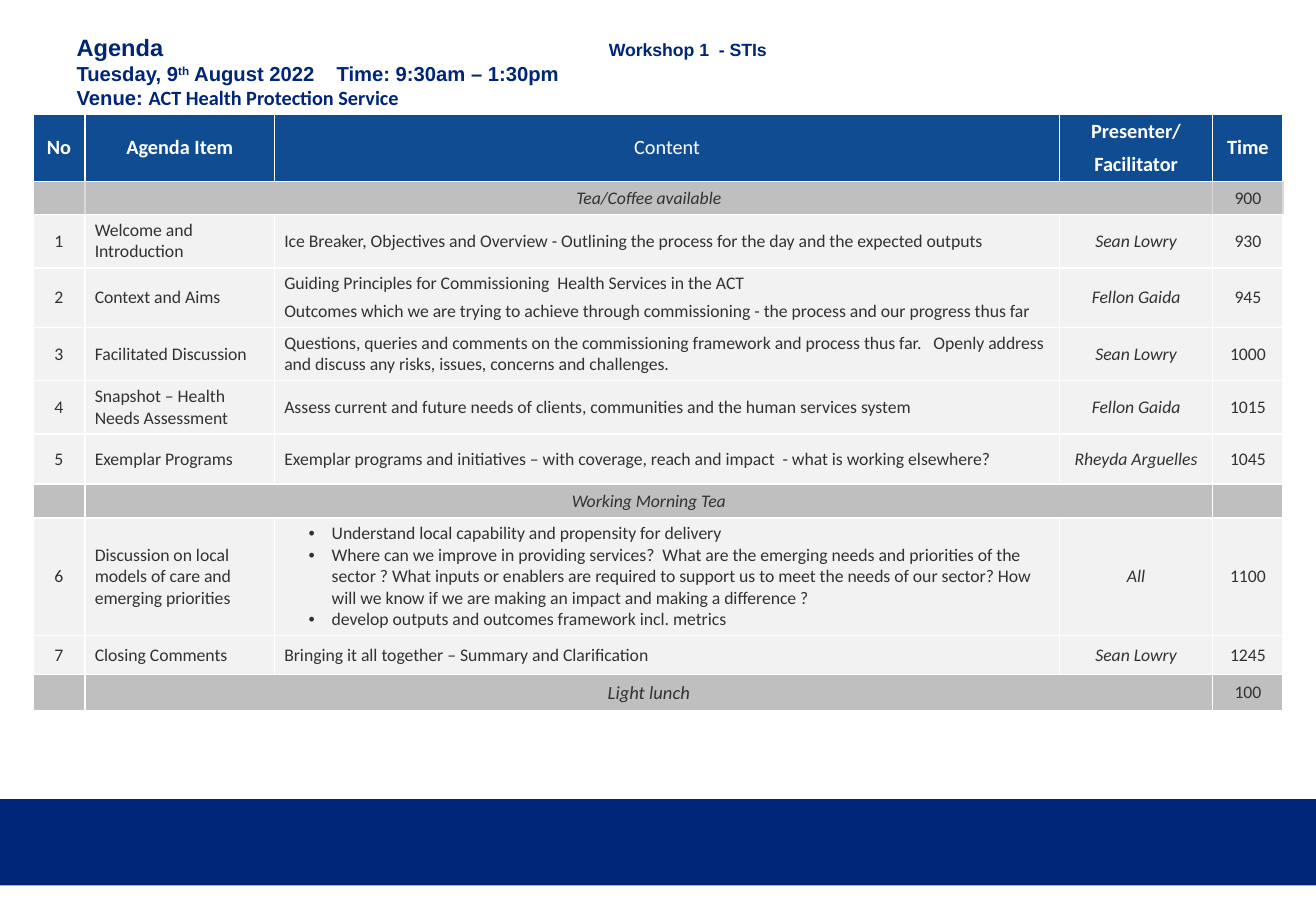
from lxml.etree import SubElement
from pptx import Presentation
from pptx.dml.color import RGBColor
from pptx.enum.shapes import MSO_SHAPE as Shape
from pptx.enum.text import MSO_ANCHOR as Anchor, MSO_AUTO_SIZE as Fit, PP_ALIGN as Align
from pptx.oxml.ns import qn
from pptx.util import Inches, Pt

NAVY = RGBColor(0x00, 0x26, 0x77)
BLUE = RGBColor(0x10, 0x4C, 0x92)
BREAK = RGBColor(0xBF, 0xBF, 0xBF)
PALE = RGBColor(0xF2, 0xF2, 0xF2)
RULE = RGBColor(0xD9, 0xD9, 0xD9)
INK = RGBColor(0x32, 0x32, 0x32)
WHITE = RGBColor(0xFF, 0xFF, 0xFF)


def add_run(para, text, size, color, font="Calibri", bold=False, italic=False):
    run = para.add_run()
    run.text = text
    style = run.font
    style.name, style.size = font, Pt(size)
    style.bold, style.italic = bold, italic
    style.color.rgb = color
    return run


def add_edge(cell, side, color):
    line = SubElement(cell._tc.get_or_add_tcPr(), qn("a:ln" + side), w=str(Pt(1)))
    fill = SubElement(line, qn("a:solidFill"))
    SubElement(fill, qn("a:srgbClr"), val=str(color))


prs = Presentation()
prs.slide_width, prs.slide_height = Inches(10.83), Inches(7.5)
slide = prs.slides.add_slide(prs.slide_layouts[5])

band = slide.shapes.add_shape(
    Shape.RECTANGLE, 0, Inches(6.58), prs.slide_width, Inches(0.71))
band.shadow.inherit = False
band.fill.solid()
band.fill.fore_color.rgb = NAVY
band.line.fill.background()

# Heading: each line has its runs and, if needed, one tab stop
title = slide.shapes.title
title.left, title.top = Inches(0.53), Inches(0.21)
title.width, title.height = Inches(9.45), Inches(0.7)
frame = title.text_frame
frame.auto_size = Fit.NONE
frame.word_wrap = True
frame.vertical_anchor = Anchor.TOP
frame.margin_top, frame.margin_bottom = Inches(0.06), 0
heading = [
    (4.38, [("Agenda\t", 14, "Arial"), ("Workshop 1  - STIs", 10.5, "Arial")]),
    (2.14, [("Tuesday, 9", 12, "Arial"), ("th", 12, "Arial"),
            (" August 2022\tTime: 9:30am – 1:30pm", 12, "Arial")]),
    (None, [("Venue: ", 12, "Arial"), ("ACT Health Protection Service", 12, "Calibri")]),
]
for i, (stop, runs) in enumerate(heading):
    para = frame.add_paragraph() if i else frame.paragraphs[0]
    para.alignment = Align.LEFT
    if stop:
        tabs = SubElement(para._p.get_or_add_pPr(), qn("a:tabLst"))
        SubElement(tabs, qn("a:tab"), pos=str(Inches(stop)), algn="l")
    for text, size, font in runs:
        run = add_run(para, text, size, NAVY, font, bold=True)
        if text == "th":
            run.font._element.set("baseline", "30000")

# Agenda rows: height, then the cells; a row of three is a break
rows = [
    (0.55, ["No", "Agenda Item", "Content", "Presenter/\nFacilitator", "Time"]),
    (0.27, ["", "Tea/Coffee available", "900"]),
    (0.44, ["1", "Welcome and Introduction",
            "Ice Breaker, Objectives and Overview - Outlining the process for the day "
            "and the expected outputs", "Sean Lowry", "930"]),
    (0.49, ["2", "Context and Aims",
            "Guiding Principles for Commissioning  Health Services in the ACT\n"
            "Outcomes which we are trying to achieve through commissioning - the process "
            "and our progress thus far", "Fellon Gaida", "945"]),
    (0.44, ["3", "Facilitated Discussion",
            "Questions, queries and comments on the commissioning framework and process "
            "thus far.   Openly address and discuss any risks, issues, concerns and "
            "challenges.", "Sean Lowry", "1000"]),
    (0.44, ["4", "Snapshot – Health Needs Assessment",
            "Assess current and future needs of clients, communities and the human "
            "services system", "Fellon Gaida", "1015"]),
    (0.41, ["5", "Exemplar Programs",
            "Exemplar programs and initiatives – with coverage, reach and impact  - what "
            "is working elsewhere?", "Rheyda Arguelles", "1045"]),
    (0.28, ["", "Working Morning Tea", ""]),
    (0.97, ["6", "Discussion on local models of care and emerging priorities",
            "Understand local capability and propensity for delivery\n"
            "Where can we improve in providing services?  What are the emerging needs and "
            "priorities of the sector ? What inputs or enablers are required to support us "
            "to meet the needs of our sector? How will we know if we are making an impact "
            "and making a difference ?\n"
            "develop outputs and outcomes framework incl. metrics", "All", "1100"]),
    (0.32, ["7", "Closing Comments",
            "Bringing it all together – Summary and Clarification", "Sean Lowry", "1245"]),
    (0.3, ["", "Light lunch", "100"]),
]
widths = [0.43, 1.56, 6.46, 1.26, 0.58]
table = slide.shapes.add_table(
    len(rows), len(widths), Inches(0.27), Inches(0.94),
    Inches(sum(widths)), Inches(sum(height for height, _ in rows))).table
for col, width in zip(table.columns, widths):
    col.width = Inches(width)

for r, (height, texts) in enumerate(rows):
    table.rows[r].height = Inches(height)
    pause = len(texts) == 3
    if pause:
        texts = [texts[0], texts[1], "", "", texts[2]]
        table.cell(r, 1).merge(table.cell(r, 3))
    for c, text in enumerate(texts):
        cell = table.cell(r, c)
        cell.vertical_anchor = Anchor.MIDDLE
        cell.margin_left = cell.margin_right = Inches(0.08)
        cell.margin_top = cell.margin_bottom = Inches(0.04)
        for side in "LRTB":
            inner = (side == "L" and c > 0) or side == "R"
            add_edge(cell, side, RULE if r == 1 and inner else WHITE)
        cell.fill.solid()
        cell.fill.fore_color.rgb = BLUE if r == 0 else BREAK if pause else PALE

        listed = texts[0] == "6" and c == 2
        for i, line in enumerate(text.split("\n")):
            para = cell.text_frame.add_paragraph() if i else cell.text_frame.paragraphs[0]
            plain = r > 0 and not pause and c in (1, 2)
            para.alignment = Align.LEFT if plain else Align.CENTER
            if i and not listed:
                para.space_before = Pt(4 if r else 5)
            if listed:
                props = para._p.get_or_add_pPr()
                props.set("marL", str(Inches(0.39)))
                props.set("indent", str(Inches(-0.19)))
                SubElement(props, qn("a:buFont"), typeface="Arial")
                SubElement(props, qn("a:buChar"), char="•")
            if not line:
                SubElement(para._p, qn("a:endParaRPr"), sz="1050")
            elif r == 0:
                add_run(para, line, 12, WHITE, bold=c != 2)
            else:
                size = 11 if line == "Light lunch" else 10.5
                slant = c == 3 or (pause and c == 1)
                add_run(para, line, size, INK, italic=slant)

prs.save("out.pptx")
